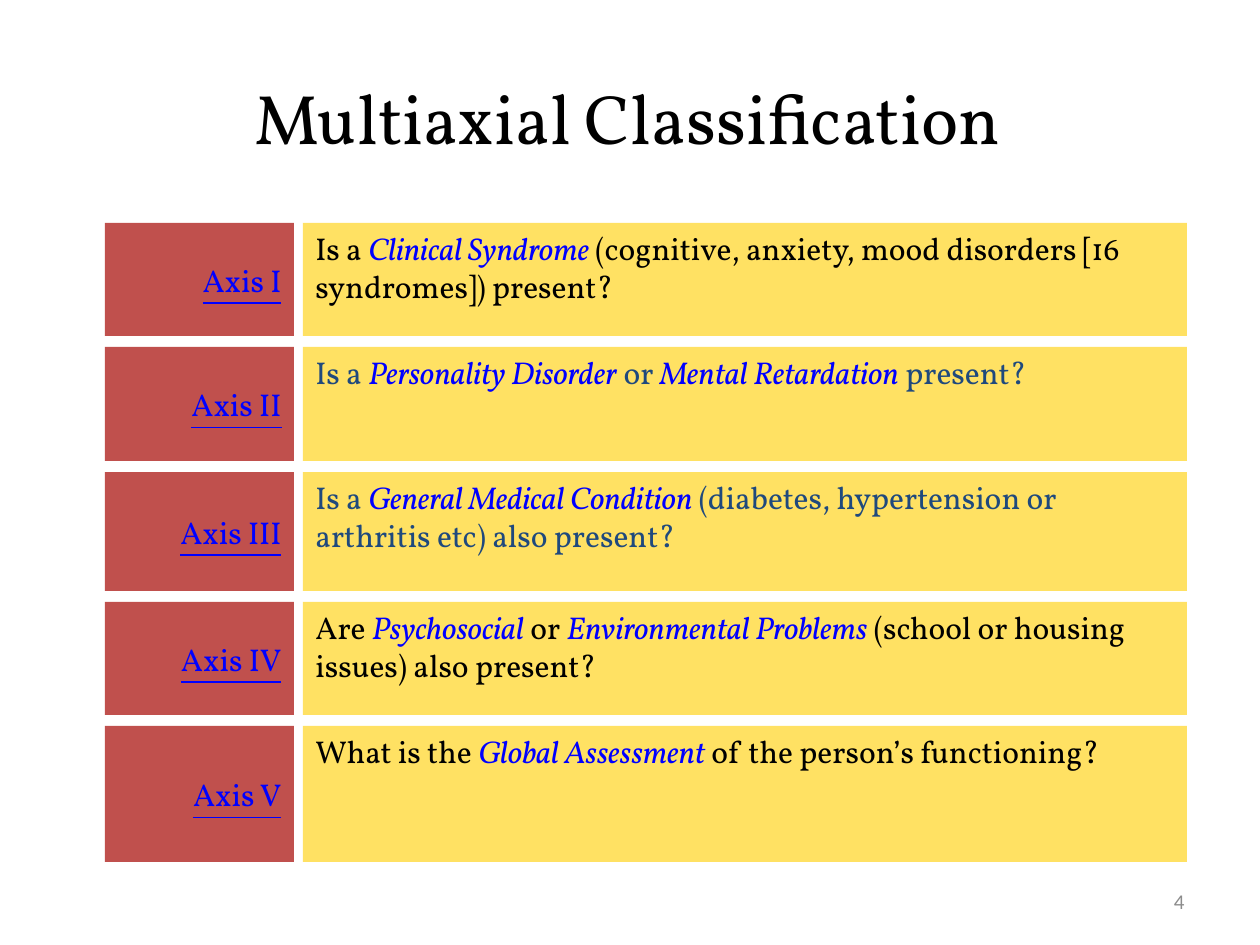
from pptx import Presentation
from pptx import util as u
from pptx.dml.color import RGBColor
from pptx.enum import shapes, text

PX = 914400 // 126
FONT = "Vollkorn"
BLACK = RGBColor(0x00, 0x00, 0x00)
NAVY = RGBColor(0x1F, 0x49, 0x7D)
BLUE = RGBColor(0x00, 0x00, 0xFF)
RED = RGBColor(0xC0, 0x50, 0x4D)
YELLOW = RGBColor(0xFF, 0xE1, 0x63)
GREY = RGBColor(0x8C, 0x8C, 0x8C)

AXES = [
    ("Axis I", 113, BLACK,
     "Is a *Clinical Syndrome* (cognitive, anxiety, mood disorders [16 syndromes]) present?"),
    ("Axis II", 114, NAVY,
     "Is a *Personality Disorder* or *Mental Retardation* present?"),
    ("Axis III", 119, NAVY,
     "Is a *General Medical Condition* (diabetes, hypertension or arthritis etc) also present?"),
    ("Axis IV", 113, BLACK,
     "Are *Psychosocial* or *Environmental Problems* (school or housing issues) also present?"),
    ("Axis V", 136, BLACK,
     "What is the *Global Assessment* of the person’s functioning?"),
]


def px(*lengths):
    """Turn pixel lengths into EMU."""
    return [length * PX for length in lengths]


def style(paragraph, size, color, font=FONT, align=text.PP_ALIGN.LEFT):
    """Format a whole paragraph."""
    paragraph.alignment = align
    paragraph.font.name = font
    paragraph.font.size = u.Pt(size)
    paragraph.font.color.rgb = color


def add_title(slide, box, wording):
    """Place and fill the title placeholder."""
    title = slide.shapes.title
    title.left, title.top, title.width, title.height = px(*box)
    title.text_frame.text = wording
    title.text_frame.vertical_anchor = text.MSO_ANCHOR.MIDDLE
    style(title.text_frame.paragraphs[0], 40, BLACK, align=text.PP_ALIGN.CENTER)


def add_panel(slide, box, fill, anchor):
    """Draw a filled rectangle and return its text frame."""
    panel = slide.shapes.add_shape(shapes.MSO_SHAPE.RECTANGLE, *px(*box))
    panel.shadow.inherit = False
    panel.fill.solid()
    panel.fill.fore_color.rgb = fill
    panel.line.fill.background()
    panel.text_frame.word_wrap = True
    panel.text_frame.vertical_anchor = anchor
    return panel.text_frame


def add_axis(slide, box, axis, color, question):
    """Draw one row: the axis label and its question."""
    left, top, width, height = box
    label_width, gap = 189, 9
    indent = label_width + gap

    label = add_panel(slide, (left, top, label_width, height), RED,
                      text.MSO_ANCHOR.MIDDLE).paragraphs[0]
    label.text = axis
    style(label, 18, BLUE, align=text.PP_ALIGN.RIGHT)
    label.font.underline = True

    wording = add_panel(slide, (left + indent, top, width - indent, height), YELLOW,
                        text.MSO_ANCHOR.TOP).paragraphs[0]
    style(wording, 18, color)
    for index, part in enumerate(question.split("*")):
        run = wording.add_run()
        run.text = part
        if index % 2:
            run.font.italic = True
            run.font.color.rgb = BLUE


def add_axes(slide, box, gap):
    """Stack the axis rows from the top of the box."""
    left, top, width = box
    for axis, height, color, question in AXES:
        add_axis(slide, (left, top, width, height), axis, color, question)
        top += height + gap


def add_page_number(slide, box, number):
    """Write the page number."""
    frame = slide.shapes.add_textbox(*px(*box)).text_frame
    frame.word_wrap = True
    frame.vertical_anchor = text.MSO_ANCHOR.MIDDLE
    frame.text = number
    style(frame.paragraphs[0], 12, GREY, "Calibri", text.PP_ALIGN.RIGHT)


def main():
    """Build and save the slide."""
    deck = Presentation()
    deck.slide_width, deck.slide_height = px(1260, 945)
    slide = deck.slides.add_slide(deck.slide_layouts.get_by_name("Title Only"))
    add_title(slide, (92, 38, 1071, 158), "Multiaxial Classification")
    add_axes(slide, (105, 223, 1082), 11)
    add_page_number(slide, (903, 876, 294, 50), "4")
    deck.save("out.pptx")


if __name__ == "__main__":
    main()
